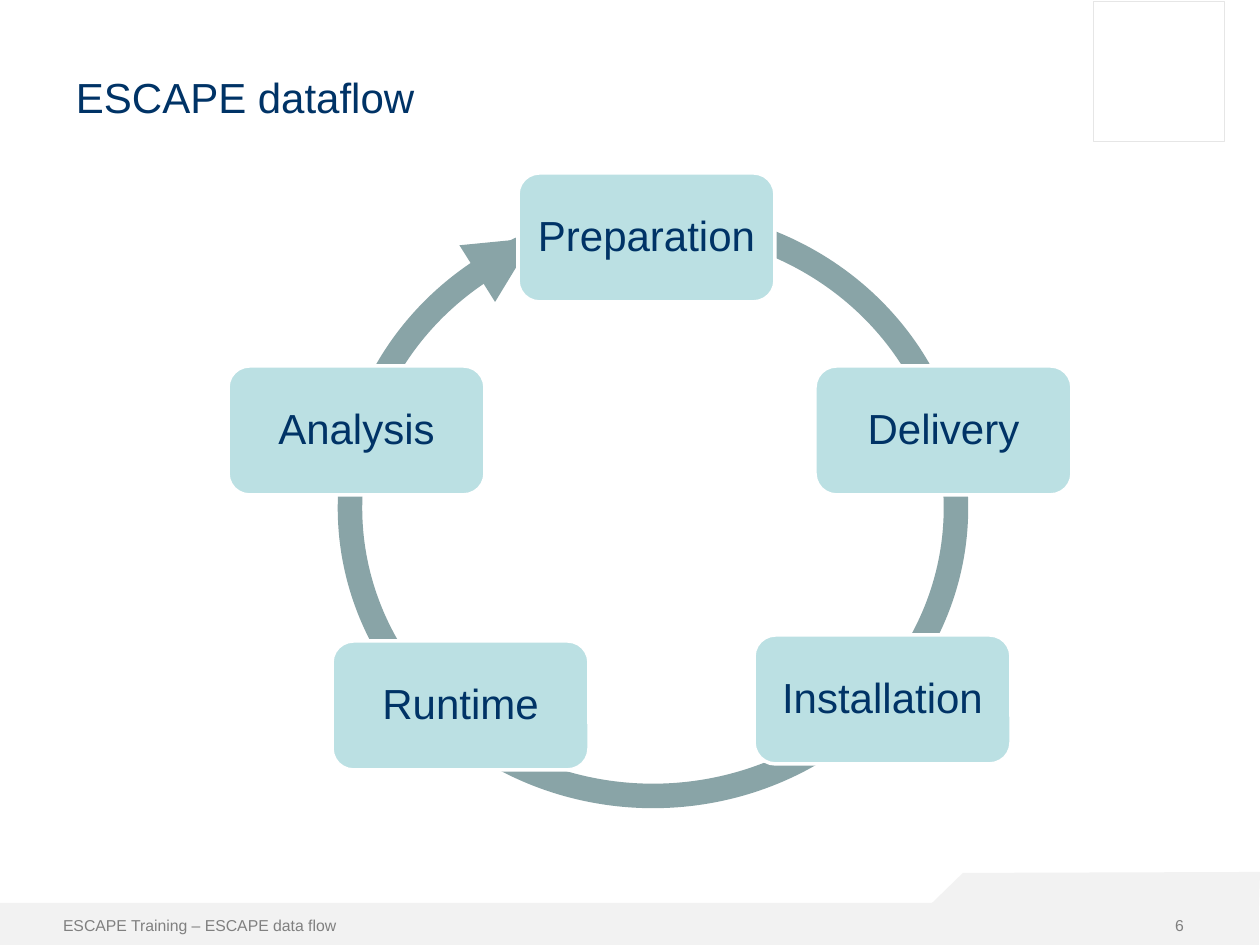
"""Build the ESCAPE dataflow cycle slide."""
import dataclasses

import pptx
import pptx.dml.color
import pptx.enum.shapes
import pptx.enum.text
import pptx.oxml.ns
import pptx.util
from lxml import etree

EMU_PER_PX = 914400 / 126
SHAPES = pptx.enum.shapes.MSO_SHAPE
ALIGN = pptx.enum.text.PP_ALIGN
ANCHOR = pptx.enum.text.MSO_ANCHOR


@dataclasses.dataclass(frozen=True)
class Theme:
    font: str = "Arial"
    navy: str = "003366"
    gray: str = "808080"
    band: str = "F2F2F2"
    frame: str = "E6E6E6"
    white: str = "FFFFFF"
    card: str = "BBE0E3"
    ring: str = "89A4A7"
    heading: int = 24
    small: int = 9


@dataclasses.dataclass(frozen=True)
class Area:
    left: int
    top: int
    width: int
    height: int

    def emu(self):
        return [px(value) for value in dataclasses.astuple(self)]


@dataclasses.dataclass(frozen=True)
class Stage:
    name: str
    left: int
    top: int


THEME = Theme()
CARD_WIDTH, CARD_HEIGHT = 257, 129
STAGES = [
    Stage("Delivery", 815, 366),
    Stage("Installation", 754, 635),
    Stage("Runtime", 332, 641),
    Stage("Analysis", 228, 366),
    Stage("Preparation", 518, 173),
]


def px(value: int) -> pptx.util.Emu:
    return pptx.util.Emu(round(value * EMU_PER_PX))


def rgb(value: str) -> pptx.dml.color.RGBColor:
    return pptx.dml.color.RGBColor.from_string(value)


def style(shape, fill: str | None = None, line: str | None = None, weight: float = 0) -> None:
    shape.shadow.inherit = False
    if fill:
        shape.fill.solid()
        shape.fill.fore_color.rgb = rgb(fill)
    else:
        shape.fill.background()
    if line:
        shape.line.color.rgb = rgb(line)
        shape.line.width = pptx.util.Pt(weight)
    else:
        shape.line.fill.background()


def add_shape(page, kind, area: Area, **look):
    shape = page.shapes.add_shape(kind, *area.emu())
    style(shape, **look)
    return shape


def write(box, text: str, *, size: int, color: str, align=ALIGN.LEFT,
          anchor=ANCHOR.MIDDLE, left_inset: int = 13, spacing: float = 1.0) -> None:
    frame = box.text_frame
    frame.word_wrap = True
    frame.auto_size = pptx.enum.text.MSO_AUTO_SIZE.NONE
    frame.vertical_anchor = anchor
    frame.margin_left, frame.margin_right = px(left_inset), px(13)
    frame.margin_top = frame.margin_bottom = px(6)
    para = frame.paragraphs[0]
    para.alignment = align
    para.line_spacing = spacing
    span = para.add_run()
    span.text = text
    span.font.name = THEME.font
    span.font.size = pptx.util.Pt(size)
    span.font.color.rgb = rgb(color)


def add_text(page, area: Area, text: str, **form) -> None:
    write(page.shapes.add_textbox(*area.emu()), text, **form)


def add_backdrop(page) -> None:
    add_shape(page, SHAPES.RECTANGLE, Area(0, 903, 1259, 42), fill=THEME.band)
    builder = page.shapes.build_freeform(929, 906, scale=EMU_PER_PX)
    builder.add_line_segments([(1259, 907), (1260, 872), (963, 873)], close=True)
    style(builder.convert_to_shape(), fill=THEME.band)
    add_shape(page, SHAPES.RECTANGLE, Area(1093, 1, 131, 140),
              fill=THEME.white, line=THEME.frame, weight=0.25)


def add_title(page, text: str) -> None:
    title = page.shapes.title
    title.left, title.top, title.width, title.height = Area(63, 66, 942, 107).emu()
    write(title, text, size=THEME.heading, color=THEME.navy, anchor=ANCHOR.TOP)


def add_arrow(page, start: tuple[int, int], end: tuple[int, int]) -> None:
    arrow = page.shapes.add_connector(
        pptx.enum.shapes.MSO_CONNECTOR.STRAIGHT, *map(px, start + end))
    arrow.line.color.rgb = rgb(THEME.ring)
    arrow.line.width = pptx.util.Pt(12.75)
    properties = arrow.element.spPr
    outline = properties.find(pptx.oxml.ns.qn("a:ln"))
    etree.SubElement(outline, pptx.oxml.ns.qn("a:tailEnd"), type="triangle")
    etree.SubElement(properties, pptx.oxml.ns.qn("a:effectLst"))


def add_stage(page, stage: Stage) -> None:
    area = Area(stage.left, stage.top, CARD_WIDTH, CARD_HEIGHT)
    card = add_shape(page, SHAPES.ROUNDED_RECTANGLE, area,
                     fill=THEME.card, line=THEME.white, weight=2)
    write(card, stage.name, size=THEME.heading, color=THEME.navy,
          align=ALIGN.CENTER, spacing=0.9)


def main() -> None:
    deck = pptx.Presentation()
    deck.slide_width, deck.slide_height = px(1260), px(945)
    page = deck.slides.add_slide(deck.slide_layouts[5])
    add_backdrop(page)
    add_title(page, "ESCAPE dataflow")
    footer = {"size": THEME.small, "color": THEME.gray}
    add_text(page, Area(63, 906, 575, 38), "ESCAPE Training – ESCAPE data flow",
             left_inset=0, **footer)
    add_text(page, Area(1131, 906, 66, 38), "6", align=ALIGN.RIGHT, **footer)
    add_shape(page, SHAPES.OVAL, Area(350, 220, 606, 576), line=THEME.ring, weight=14)
    *lower_stages, first_stage = STAGES
    for stage in lower_stages:
        add_stage(page, stage)
    add_arrow(page, (464, 282), (534, 238))
    add_stage(page, first_stage)
    deck.save("out.pptx")


if __name__ == "__main__":
    main()
